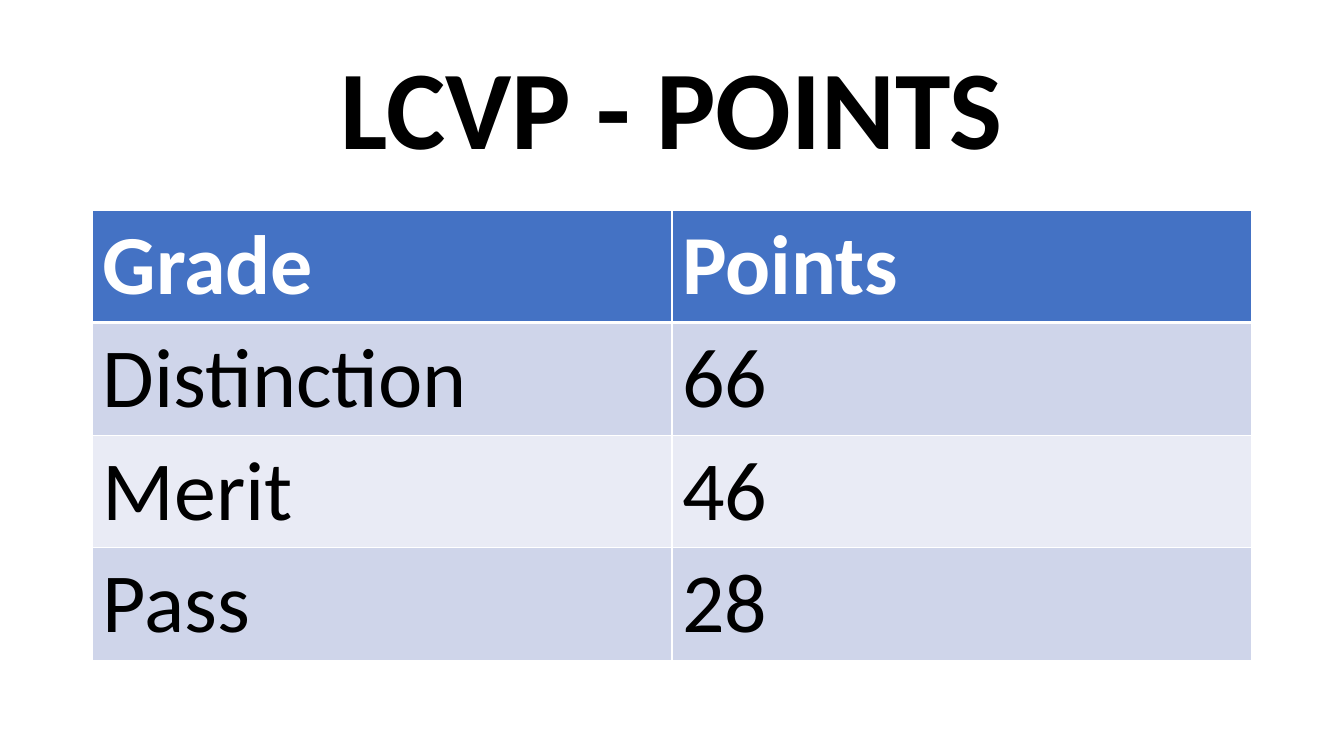
from dataclasses import dataclass

from lxml.etree import SubElement
from pptx import Presentation
from pptx.dml.color import RGBColor
from pptx.enum.text import MSO_ANCHOR, MSO_AUTO_SIZE, PP_ALIGN
from pptx.oxml.ns import qn
from pptx.util import Cm, Pt


@dataclass(frozen=True)
class Theme:
    font: str = "Calibri"
    title_size: int = 80
    cell_size: int = 60
    black: str = "000000"
    white: str = "FFFFFF"
    header: str = "4472C4"
    bands: tuple = ("CFD5EA", "E9EBF5")
    thin: int = 1
    thick: int = 3


theme = Theme()


def style_text(paragraph, size, color, bold):
    formats = {"name": theme.font, "size": Pt(size), "bold": bold}
    for attribute, value in formats.items():
        setattr(paragraph.font, attribute, value)
    paragraph.font.color.rgb = RGBColor.from_string(color)


def add_border(cell, position, side, width):
    properties = cell._tc.get_or_add_tcPr()
    line = properties.makeelement(qn(f"a:ln{side}"), {"w": str(Pt(width))})
    fill = SubElement(line, qn("a:solidFill"))
    SubElement(fill, qn("a:srgbClr"), val=theme.white)
    properties.insert(position, line)


# Slide
deck = Presentation()
deck.slide_width, deck.slide_height = Cm(33.87), Cm(19.05)
slide = deck.slides.add_slide(deck.slide_layouts[5])
left, content_width = Cm(2.33), Cm(29.21)

# Title
title = slide.shapes.title
title_box = {"left": left, "top": Cm(1.01), "width": content_width, "height": Cm(3.68)}
for attribute, value in title_box.items():
    setattr(title, attribute, value)
title.text_frame.text = "LCVP - POINTS"
title.text_frame.auto_size = MSO_AUTO_SIZE.NONE
title.text_frame.vertical_anchor = MSO_ANCHOR.MIDDLE
heading = title.text_frame.paragraphs[0]
heading.alignment = PP_ALIGN.CENTER
heading.line_spacing = 0.9
style_text(heading, theme.title_size, theme.black, True)

# Points for each grade
grade_points = [
    ("Grade", "Points"),
    ("Distinction", "66"),
    ("Merit", "46"),
    ("Pass", "28"),
]
points_table = slide.shapes.add_table(
    len(grade_points), 2, left, Cm(5.29), content_width, Cm(11.2)
).table

for row, entries in enumerate(grade_points):
    is_header = row == 0
    fill_color = theme.header if is_header else theme.bands[(row - 1) % 2]
    text_color = theme.white if is_header else theme.black
    # The rule under the header is thicker than the others
    borders = {
        "L": theme.thin,
        "R": theme.thin,
        "T": theme.thick if row == 1 else theme.thin,
        "B": theme.thick if is_header else theme.thin,
    }
    for column, entry in enumerate(entries):
        cell = points_table.cell(row, column)
        cell.text = entry
        cell.fill.solid()
        cell.fill.fore_color.rgb = RGBColor.from_string(fill_color)
        style_text(cell.text_frame.paragraphs[0], theme.cell_size, text_color, is_header)
        for position, (side, width) in enumerate(borders.items()):
            add_border(cell, position, side, width)

deck.save("out.pptx")
